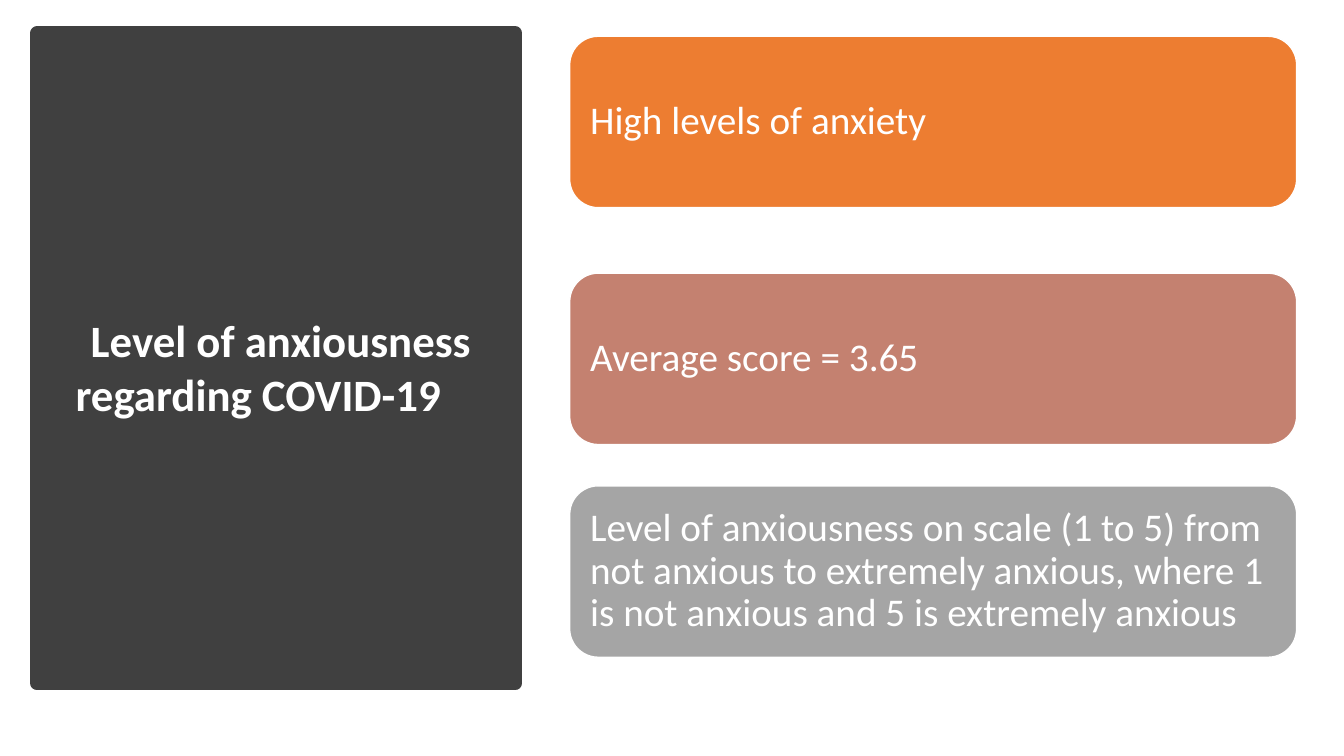
"""Build the slide on anxiety about COVID-19: a dark title panel beside three cards."""
from pptx import Presentation, util as u
from pptx.dml.color import RGBColor
from pptx.enum import shapes, text

THEME = {
    "font": "Calibri", "text": "FFFFFF", "panel": "404040", "card_line": "FFFFFF",
    "cards": ["ED7D31", "C48170", "A5A5A5"],
    "lead": 48, "title": 32, "body": 28,
}

prs = Presentation()
prs.slide_width, prs.slide_height = u.Inches(13.33), u.Inches(7.5)
s = prs.slides.add_slide(prs.slide_layouts[6])


def place(x, y, w, h):
    """Turn percentages of the slide into left, top, width and height."""
    W, H = prs.slide_width, prs.slide_height
    return [int(share * side / 100) for share, side in ((x, W), (y, H), (w, W), (h, H))]


def write(sp, runs, inset):
    """Fill a shape with one left-aligned paragraph of (text, size, bold) runs."""
    tf = sp.text_frame
    tf.word_wrap = True
    tf.vertical_anchor = text.MSO_ANCHOR.MIDDLE
    tf.margin_left = tf.margin_right = u.Inches(inset)
    p = tf.paragraphs[0]
    p.alignment = text.PP_ALIGN.LEFT
    p.line_spacing = 0.9
    for words, size, bold in runs:
        r = p.add_run()
        r.text = words
        r.font.name, r.font.size, r.font.bold = THEME["font"], u.Pt(size), bold
        r.font.color.rgb = RGBColor.from_string(THEME["text"])


cards = [
    (4.8, "High levels of anxiety"),
    (36.13, "Average score = 3.65"),
    (64.27, "Level of anxiousness on scale (1 to 5) from not anxious to extremely "
            "anxious, where 1 is not anxious and 5 is extremely anxious"),
]
RECT, ROUND = shapes.MSO_SHAPE.RECTANGLE, shapes.MSO_SHAPE.ROUNDED_RECTANGLE
blocks = [(RECT, (2.78, 4.4, 35.56, 86), THEME["panel"], THEME["panel"], 10, None)]
for (top, words), fill in zip(cards, THEME["cards"]):
    blocks.append((ROUND, (42.39, top, 54.09, 22.67), fill, THEME["card_line"], 1, words))

for kind, area, fill, line, width, words in blocks:
    sp = s.shapes.add_shape(kind, *place(*area))
    sp.shadow.inherit = False
    sp.fill.solid()
    sp.fill.fore_color.rgb = RGBColor.from_string(fill)
    sp.line.color.rgb = RGBColor.from_string(line)
    sp.line.width = u.Pt(width)
    if words:
        write(sp, [(words, THEME["body"], False)], 0.12)

title = s.shapes.add_textbox(*place(4.88, 9.33, 31.21, 76.67))
write(title, [(" ", THEME["lead"], False),
              ("Level of anxiousness regarding COVID-19", THEME["title"], True)], 0.1)

prs.save("out.pptx")
